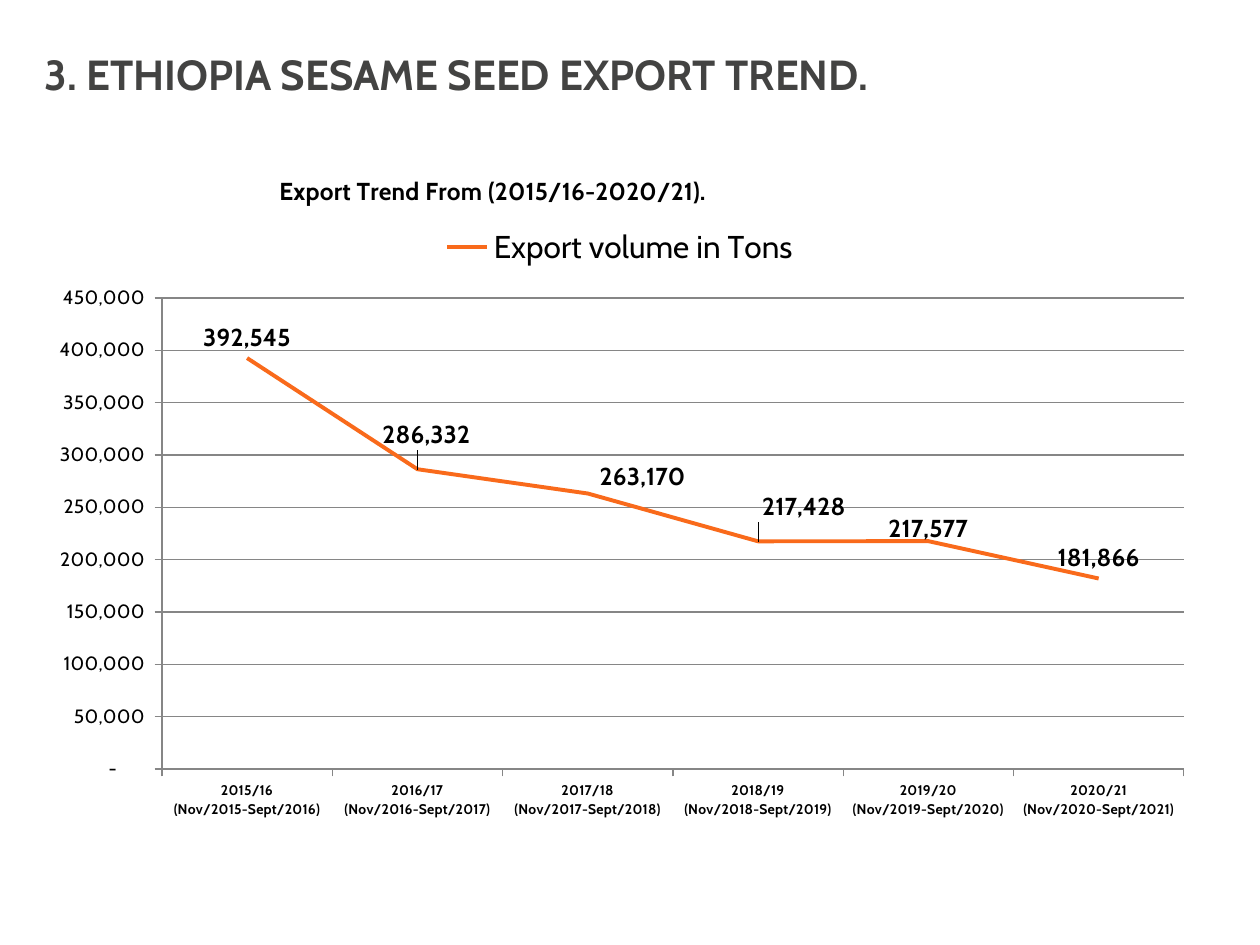
from lxml import etree
from pptx import Presentation
from pptx import util as u
from pptx.chart.data import CategoryChartData
from pptx.dml.color import RGBColor
from pptx.enum import chart as ch, text
from pptx.oxml import parse_xml
from pptx.oxml.ns import nsdecls, qn

FACE = "Cabin"
FORM = '_(* #,##0_);_(* \\(#,##0\\);_(* "-"??_);_('
BOX = (32, 147, 1176, 703)
PLOT = (162, 298, 1022, 471)
HEAD = (275, 170)
VOLUMES = [392545, 286332, 263170, 217428, 217577, 181866]
# Label shifts in px, by point
SHIFTS = {1: (9, -14), 2: (55, 4), 3: (46, -14), 4: (0, 8)}


def px(n):
    return u.Emu(round(n * 914400 / 126))


def rgb(code):
    return RGBColor.from_string(code)


def style(font, size, bold=False, color="000000"):
    form = {"name": FACE, "size": u.Pt(size), "bold": bold}
    for key, val in form.items():
        setattr(font, key, val)
    font.color.rgb = rgb(color)


def layout(**vals):
    """Make a manual chart layout from its settings, in schema order."""
    node = parse_xml(f"<c:layout {nsdecls('c')}><c:manualLayout/></c:layout>")
    for key, val in vals.items():
        etree.SubElement(node[0], qn(f"c:{key}")).set("val", str(val))
    return node


def part(n, axis):
    """Turn a px length into a fraction of the chart's width (0) or height (1)."""
    return round(n / BOX[2 + axis], 4)


def spot(x, y):
    """Give the settings for a place measured from the chart's corner."""
    return {"xMode": "edge", "yMode": "edge",
            "x": part(x - BOX[0], 0), "y": part(y - BOX[1], 1)}


def add_title(slide, words):
    title = slide.shapes.title
    place = {"left": 32, "top": 21, "width": 1081, "height": 105}
    for key, val in place.items():
        setattr(title, key, px(val))
    frame = title.text_frame
    frame.text = words
    frame.vertical_anchor = text.MSO_ANCHOR.MIDDLE
    para = frame.paragraphs[0]
    para.alignment = text.PP_ALIGN.LEFT
    style(para.runs[0].font, 24, True, "434342")


def add_chart(slide):
    data = CategoryChartData(number_format=FORM)
    data.categories = [f"{y}/{y - 1999}\n(Nov/{y}-Sept/{y + 1})"
                       for y in range(2015, 2021)]
    data.add_series("Export volume in Tons", VOLUMES)
    chart = slide.shapes.add_chart(
        ch.XL_CHART_TYPE.LINE, *map(px, BOX), data).chart
    style(chart.font, 18)
    return chart


def set_head(chart, words):
    chart.has_title = True
    frame = chart.chart_title.text_frame
    frame.text = words
    style(frame.paragraphs[0].runs[0].font, 14, True)
    node = chart._chartSpace.chart.find(qn("c:title"))
    for old in node.findall(qn("c:layout")):
        node.remove(old)
    node.find(qn("c:tx")).addnext(layout(**spot(*HEAD)))
    chart.has_legend = True
    chart.legend.position = ch.XL_LEGEND_POSITION.TOP
    chart.legend.include_in_layout = False
    style(chart.legend.font, 18)


def set_axes(chart):
    for axis, size, bold in ((chart.category_axis, 8, True),
                             (chart.value_axis, 11, False)):
        style(axis.tick_labels.font, size, bold)
        axis.major_tick_mark = ch.XL_TICK_MARK.OUTSIDE
        axis.format.line.color.rgb = rgb("868686")
    value = chart.value_axis
    form = {"minimum_scale": 0, "maximum_scale": 450000, "major_unit": 50000,
            "has_major_gridlines": True}
    for key, val in form.items():
        setattr(value, key, val)
    value.major_gridlines.format.line.color.rgb = rgb("868686")
    value.tick_labels.number_format = FORM
    value.tick_labels.number_format_is_linked = False
    area = chart._chartSpace.chart.plotArea
    for old in area.findall(qn("c:layout")):
        area.remove(old)
    x, y, w, h = PLOT
    area.insert(0, layout(layoutTarget="inner", **spot(x, y),
                          w=part(w, 0), h=part(h, 1)))


def set_line(chart):
    line = chart.plots[0].series[0]
    line.smooth = False
    line.marker.style = ch.XL_MARKER_STYLE.NONE
    line.format.line.color.rgb = rgb("F96A1B")
    line.format.line.width = u.Pt(2.25)
    labels = line.data_labels
    form = {"show_value": True, "position": ch.XL_LABEL_POSITION.ABOVE,
            "number_format": FORM, "number_format_is_linked": False}
    for key, val in form.items():
        setattr(labels, key, val)
    style(labels.font, 14, True)
    for idx, (x, y) in SHIFTS.items():
        label = line.points[idx].data_label
        style(label.font, 14, True)
        label.position = ch.XL_LABEL_POSITION.ABOVE
        node = labels._element.findall(qn("c:dLbl"))[-1]
        node.insert(1, layout(x=part(x, 0), y=part(y, 1)))
        form = etree.Element(qn("c:numFmt"))
        form.set("formatCode", FORM)
        form.set("sourceLinked", "0")
        node.insert(2, form)


def main():
    deck = Presentation()
    deck.slide_width, deck.slide_height = px(1260), px(945)
    slide = deck.slides.add_slide(deck.slide_layouts[5])
    add_title(slide, "3. ETHIOPIA SESAME SEED EXPORT TREND.")
    chart = add_chart(slide)
    set_head(chart, "Export Trend From (2015/16-2020/21).")
    set_axes(chart)
    set_line(chart)
    deck.save("out.pptx")


if __name__ == "__main__":
    main()
